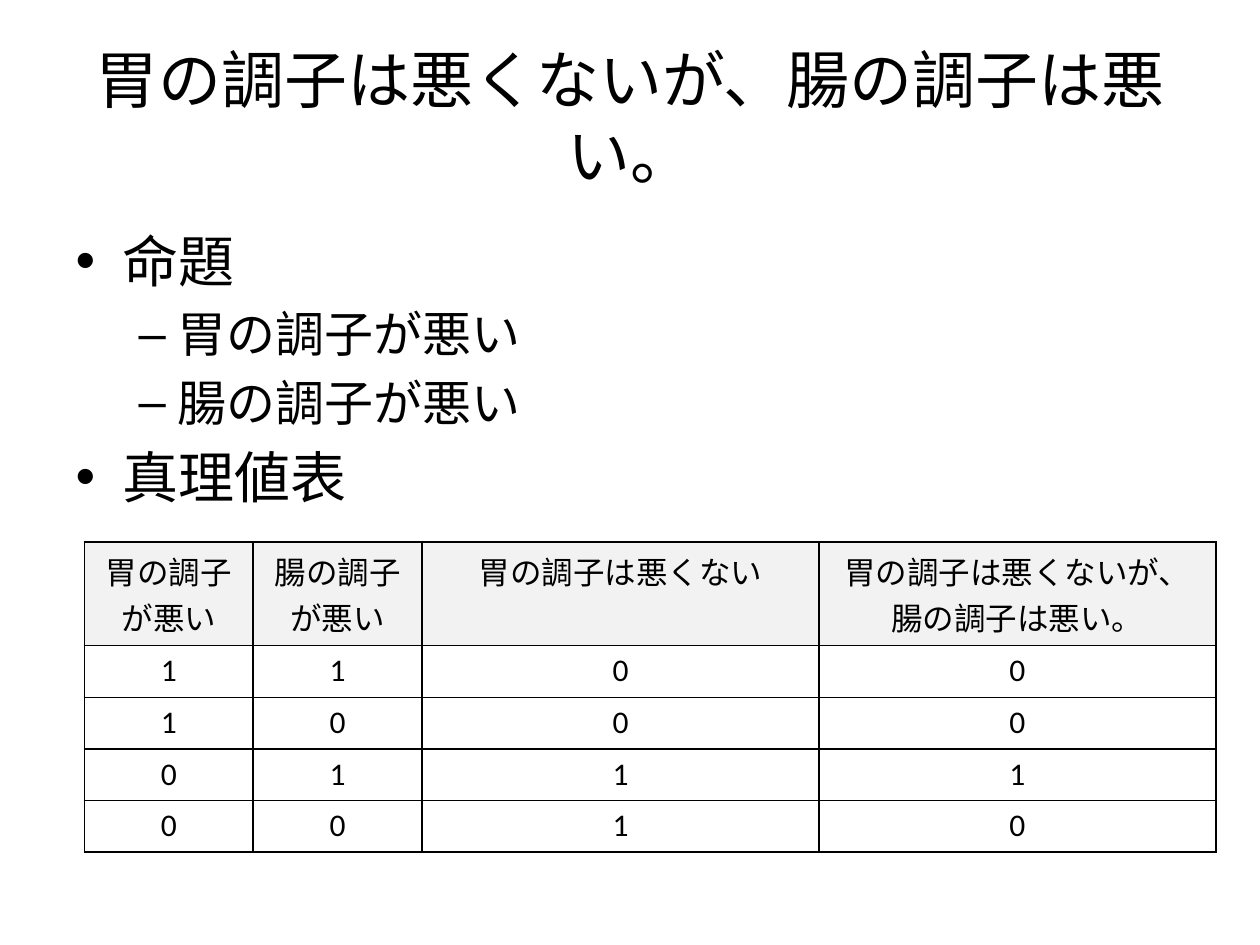
from itertools import product

from lxml.etree import SubElement
from pptx import Presentation
from pptx.dml.color import RGBColor
from pptx.enum.text import MSO_ANCHOR, PP_ALIGN
from pptx.oxml.ns import qn
from pptx.util import Inches, Pt


def style_text(para, size, color="000000"):
    for span in para.runs:
        span.font.size = Pt(size)
        span.font.name = "Calibri"
        span.font.color.rgb = RGBColor.from_string(color)


def add_borders(cell, color="000000", width=1):
    properties = cell._tc.get_or_add_tcPr()
    for position, side in enumerate(("a:lnL", "a:lnR", "a:lnT", "a:lnB")):
        line = SubElement(properties, qn(side), w=str(Pt(width)))
        fill = SubElement(line, qn("a:solidFill"))
        SubElement(fill, qn("a:srgbClr"), val=color)
        properties.insert(position, line)  # borders come before the cell fill


deck = Presentation()
deck.slide_width, deck.slide_height = Inches(10), Inches(7.5)
page = deck.slides.add_slide(deck.slide_layouts[1])

# Title
title = page.shapes.title
title.left, title.top = Inches(0.5), Inches(0.3)
title.width, title.height = Inches(9), Inches(1.25)
title.text_frame.text = "胃の調子は悪くないが、腸の調子は悪い。"
title.text_frame.vertical_anchor = MSO_ANCHOR.MIDDLE
style_text(title.text_frame.paragraphs[0], 36)

# Propositions
body = page.placeholders[1]
body.left, body.top = Inches(0.5), Inches(1.75)
body.width, body.height = Inches(9), Inches(4.95)
items = [("命題", 0), ("胃の調子が悪い", 1), ("腸の調子が悪い", 1), ("真理値表", 0)]
body.text_frame.text = "\n".join(text for text, level in items)
for para, (text, level) in zip(body.text_frame.paragraphs, items):
    para.level = level
    style_text(para, 28 if level else 32)

# Truth table
headers = ["胃の調子が悪い", "腸の調子が悪い", "胃の調子は悪くない",
           "胃の調子は悪くないが、腸の調子は悪い。"]
rows = [headers]
for stomach, bowel in product((1, 0), repeat=2):
    rows.append([stomach, bowel, 1 - stomach, (1 - stomach) * bowel])

table = page.shapes.add_table(len(rows), len(headers), Inches(0.67), Inches(4.3),
                              Inches(8.98), Inches(2.32)).table
for column, width in zip(table.columns, (1.34, 1.34, 3.15, 3.15)):
    column.width = Inches(width)
for row_index, values in enumerate(rows):
    table.rows[row_index].height = Inches(0.41)
    for column_index, value in enumerate(values):
        cell = table.cell(row_index, column_index)
        cell.text_frame.text = str(value)
        para = cell.text_frame.paragraphs[0]
        para.alignment = PP_ALIGN.CENTER
        style_text(para, 18)
        for span in para.runs:
            span.font.bold = False
        if row_index == 0:
            cell.fill.solid()
            cell.fill.fore_color.rgb = RGBColor.from_string("F2F2F2")
        else:
            cell.fill.background()
        add_borders(cell)

deck.save("out.pptx")
